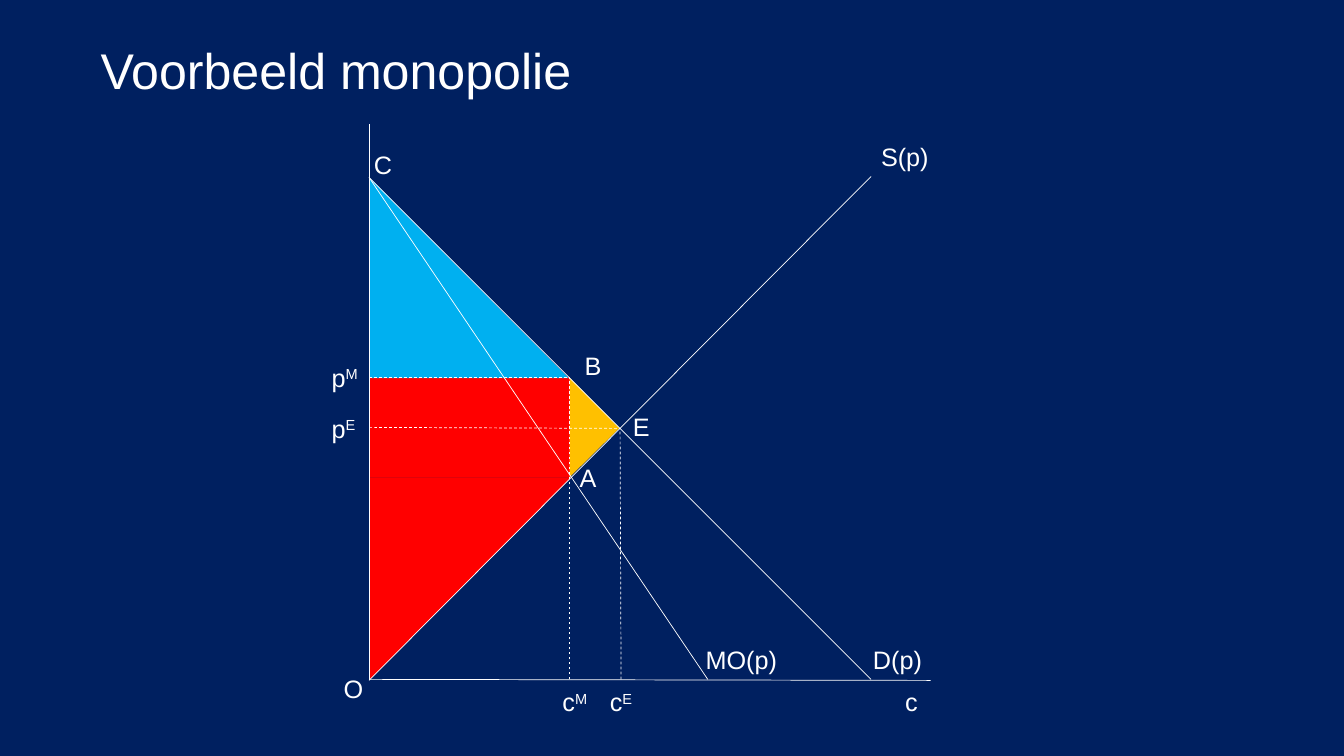
import pptx
import pptx.util
import pptx.dml.color
import pptx.enum.dml
import pptx.enum.shapes
import pptx.enum.text
import pptx.oxml.ns
from lxml import etree

Inches, Pt = pptx.util.Inches, pptx.util.Pt
RGB = pptx.dml.color.RGBColor
SHAPE = pptx.enum.shapes.MSO_SHAPE

NAVY = RGB(0x00, 0x20, 0x60)
WHITE = RGB(0xFF, 0xFF, 0xFF)
GOLD = RGB(0xFF, 0xC0, 0x00)
RED = RGB(0xFF, 0x00, 0x00)
BLUE = RGB(0x00, 0xB0, 0xF0)
FONT = "Arial"

TITLE = "Voorbeeld monopolie"

# Key places in the graph, in inches
LEFT, BASE = 3.66, 6.74
TOP = 1.76            # C, where demand meets the price axis
END = 8.64            # right end of demand and supply
C_M, P_M = 5.65, 3.74
C_E, P_E = 6.15, 4.25

# kind, left, top, width, height, rotation, colour
AREAS = [
    (SHAPE.RIGHT_TRIANGLE, 5.29, 3.89, 0.71, 0.7, 225.3, GOLD),
    (SHAPE.RIGHT_TRIANGLE, LEFT, 4.74, 2.01, 2, 90, RED),
    (SHAPE.RECTANGLE, LEFT, P_M, 1.99, 1, 0, RED),
    (SHAPE.RIGHT_TRIANGLE, LEFT, TOP, 1.98, 1.99, 0, BLUE),
]

# x1, y1, x2, y2
SOLID = [
    (LEFT, 1.23, LEFT, 6.75),     # price axis
    (9.23, 6.75, LEFT, BASE),     # quantity axis
    (LEFT, TOP, END, BASE),       # demand
    (LEFT, 6.75, END, 1.75),      # supply
    (LEFT, TOP, 7.02, BASE),      # marginal revenue
]
DASHED = [
    (LEFT, P_M, C_M, P_M),
    (C_M, BASE, C_M, P_M),
    (LEFT, 4.24, C_E, P_E),
    (6.16, BASE, C_E, P_E),
]

# text, superscript, left, top, width
LABELS = [
    ("p", "M", 3.19, 3.54, 0.84),
    ("p", "E", 3.19, 4.05, 0.84),
    ("c", "M", 5.48, 6.76, 0.79),
    ("c", "E", 5.95, 6.76, 0.79),
    ("c", "", 8.88, 6.76, 0.31),
    ("S(p)", "", 8.64, 1.35, 0.8),
    ("D(p)", "", 8.56, 6.34, 0.78),
    ("MO(p)", "", 6.9, 6.34, 1.04),
    ("O", "", 3.31, 6.63, 0.4),
    ("A", "", 5.65, 4.54, 0.37),
    ("B", "", 5.7, 3.43, 0.37),
    ("C", "", 3.61, 1.43, 0.38),
    ("E", "", 6.18, 4.03, 0.37),
]


def add_area(slide, kind, x, y, w, h, turn, color):
    area = slide.shapes.add_shape(kind, *map(Inches, (x, y, w, h)))
    area.rotation = turn
    area.shadow.inherit = False
    area.fill.solid()
    area.fill.fore_color.rgb = color
    area.line.fill.background()


def add_line(slide, ends, dashed):
    line = slide.shapes.add_connector(
        pptx.enum.shapes.MSO_CONNECTOR.STRAIGHT, *map(Inches, ends))
    line.line.color.rgb = WHITE
    line.line.width = Pt(0.5)
    if dashed:
        line.line.dash_style = pptx.enum.dml.MSO_LINE.DASH
    etree.SubElement(line._element.spPr, pptx.oxml.ns.qn("a:effectLst"))


def add_text(slide, text, x, y, w, h, size):
    """Add a one-line text box and return its paragraph."""
    box = slide.shapes.add_textbox(*map(Inches, (x, y, w, h)))
    frame = box.text_frame
    frame.word_wrap = True
    frame.vertical_anchor = pptx.enum.text.MSO_ANCHOR.MIDDLE
    para = frame.paragraphs[0]
    para.add_run().text = text
    para.font.name = FONT
    para.font.size = Pt(size)
    para.font.color.rgb = WHITE
    return para


def main():
    deck = pptx.Presentation()
    deck.slide_width, deck.slide_height = Inches(13.33), Inches(7.5)
    slide = deck.slides.add_slide(deck.slide_layouts[6])
    slide.background.fill.solid()
    slide.background.fill.fore_color.rgb = NAVY

    for area in AREAS:
        add_area(slide, *area)
    for ends in SOLID:
        add_line(slide, ends, False)
    for ends in DASHED:
        add_line(slide, ends, True)
    for text, power, x, y, w in LABELS:
        para = add_text(slide, text, x, y, w, 0.4, 18)
        if power:
            run = para.add_run()
            run.text = power
            run.font._element.set("baseline", "30000")
    head = add_text(slide, TITLE, 0.9, 0, 11.5, 1.45, 35.8)
    head.line_spacing = 0.9

    deck.save("out.pptx")


if __name__ == "__main__":
    main()
